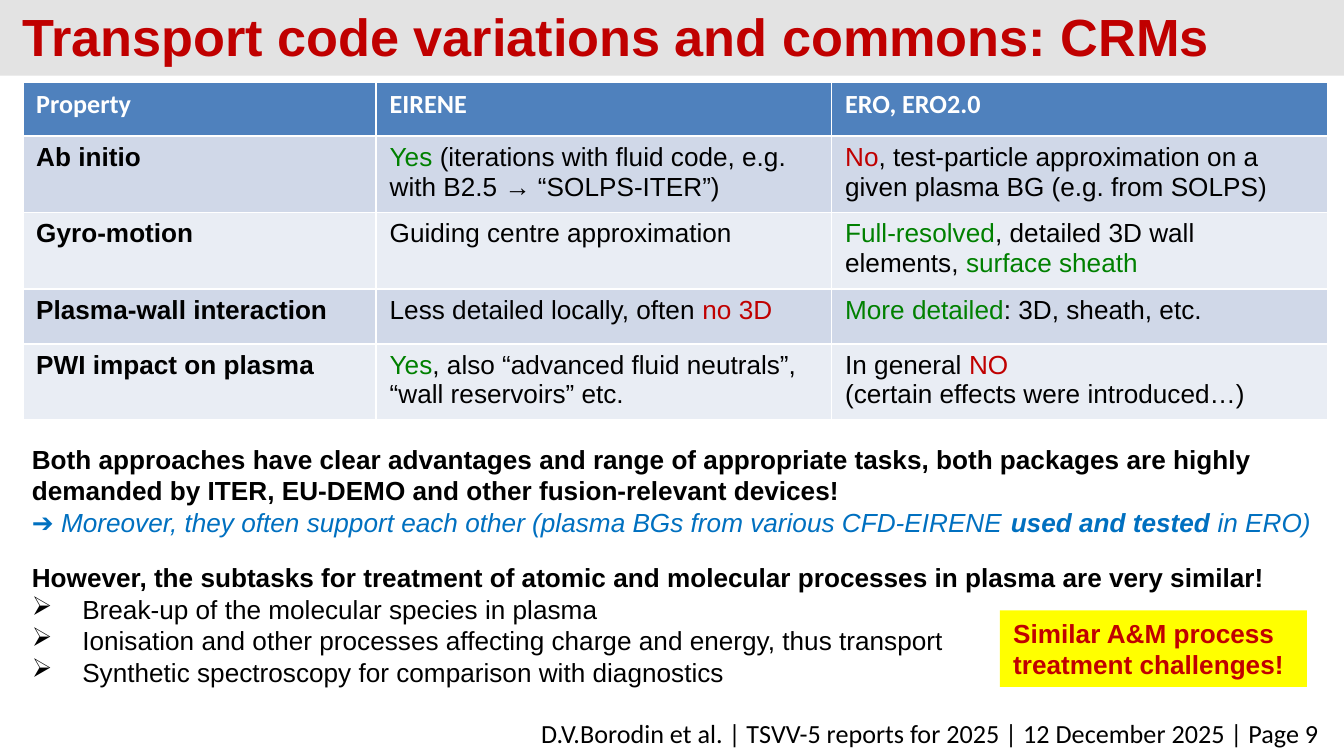
from dataclasses import dataclass

from lxml import etree
from pptx import Presentation
from pptx.dml.color import RGBColor
from pptx.enum.shapes import MSO_SHAPE
from pptx.enum.text import MSO_ANCHOR, PP_ALIGN
from pptx.oxml.ns import qn
from pptx.util import Pt

RECT = MSO_SHAPE.RECTANGLE
MIDDLE = MSO_ANCHOR.MIDDLE
LEFT, RIGHT = PP_ALIGN.LEFT, PP_ALIGN.RIGHT
TITLE_ONLY = 5


@dataclass(frozen=True)
class Theme:
    black: str = "000000"
    white: str = "FFFFFF"
    red: str = "C00000"
    green: str = "008000"
    blue: str = "0070C0"
    band: str = "E3E3E3"
    head: str = "4F81BD"
    odd: str = "D0D8E8"
    even: str = "E9EDF4"
    note: str = "FFFF00"
    sans: str = "Arial"
    alt: str = "Calibri"
    big: int = 28
    text: int = 14


T = Theme()

HEADS = ["Property", "EIRENE", "ERO, ERO2.0"]
ROWS = [
    ("Ab initio",
     [[("Yes ", T.green), ("(iterations with fluid code, e.g. with B2.5 → “SOLPS-ITER”)", T.black)]],
     [[("No", T.red), (", test-particle approximation on a given plasma BG (e.g. from SOLPS)", T.black)]]),
    ("Gyro-motion",
     [[("Guiding centre approximation", T.black)]],
     [[("Full-resolved", T.green), (", detailed 3D wall elements, ", T.black),
       ("surface sheath", T.green)]]),
    ("Plasma-wall interaction",
     [[("Less detailed locally, often ", T.black), ("no 3D", T.red)]],
     [[("More detailed", T.green), (": 3D, sheath, etc.", T.black)]]),
    ("PWI impact on plasma",
     [[("Yes", T.green), (", also “advanced fluid neutrals”, “wall reservoirs” etc.", T.black)]],
     [[("In general ", T.black), ("NO", T.red)],
      [("(certain effects were introduced…)", T.black)]]),
]
COLS = [189.4, 244, 266]
HIGHS = [29, 40.6, 40.6, 29.5, 40.6]

CLAIM = ("Both approaches have clear advantages and range of appropriate tasks, "
         "both packages are highly demanded by ITER, EU-DEMO and other fusion-relevant devices!")
MORE = [("➔ Moreover, they often support each other (plasma BGs from various CFD-EIRENE ", False),
        ("used and tested", True), (" in ERO)", False)]
TURN = ("However, the subtasks for treatment of atomic and molecular processes "
        "in plasma are very similar!")
TASKS = ["Break-up of the molecular species in plasma",
         "Ionisation and other processes affecting charge and energy, thus transport",
         "Synthetic spectroscopy for comparison with diagnostics"]


def rgb(code):
    return RGBColor.from_string(code)


def style(par, color=None, bold=None, face=T.sans, size=T.text):
    font = par.font
    font.name, font.size, font.bold = face, Pt(size), bold
    if color:
        font.color.rgb = rgb(color)


def next_par(frame):
    first = frame.paragraphs[0]
    return frame.add_paragraph() if first.runs else first


def write(frame, text, **look):
    par = next_par(frame)
    par.add_run().text = text
    style(par, **look)
    return par


def bullet(par, sign, step):
    props = par._p.get_or_add_pPr()
    props.set("marL", str(Pt(step)))
    props.set("indent", str(-Pt(step)))
    etree.SubElement(props, qn("a:buChar")).set("char", sign)


def panel(slide, box, fill):
    shape = slide.shapes.add_shape(RECT, *map(Pt, box))
    shape.shadow.inherit = False
    shape.fill.solid()
    shape.fill.fore_color.rgb = rgb(fill)
    shape.line.fill.background()
    return shape


def text_box(slide, box):
    frame = slide.shapes.add_textbox(*map(Pt, box)).text_frame
    frame.word_wrap = True
    return frame


def banner(slide, box):
    x, y, w, h = box
    band = panel(slide, box, T.band)
    tree = slide.shapes._spTree
    tree.remove(band._element)
    tree.insert(2, band._element)
    title = slide.shapes.title
    title.left, title.top, title.width, title.height = map(Pt, (x + 12, y + 6, w - 72, h - 14.5))
    frame = title.text_frame
    frame.margin_left = frame.margin_right = frame.margin_top = frame.margin_bottom = 0
    frame.vertical_anchor = MIDDLE
    par = write(frame, "Transport code variations and commons: CRMs",
                color=T.red, bold=True, size=T.big)
    par.alignment = LEFT


def fill_cell(cell, color):
    cell.fill.solid()
    cell.fill.fore_color.rgb = rgb(color)


def grid(slide, box):
    table = slide.shapes.add_table(len(HIGHS), len(COLS), *map(Pt, box)).table
    for col, wide in zip(table.columns, COLS):
        col.width = Pt(wide)
    for row, high in zip(table.rows, HIGHS):
        row.height = Pt(high)
    for c, head in enumerate(HEADS):
        cell = table.cell(0, c)
        fill_cell(cell, T.head)
        write(cell.text_frame, head, color=T.white, bold=True, face=T.alt)
    for r, (name, *pairs) in enumerate(ROWS, 1):
        for c in range(len(COLS)):
            fill_cell(table.cell(r, c), T.odd if r % 2 else T.even)
        write(table.cell(r, 0).text_frame, name, color=T.black, bold=True)
        for c, lines in enumerate(pairs, 1):
            for line in lines:
                par = next_par(table.cell(r, c).text_frame)
                for text, color in line:
                    run = par.add_run()
                    run.text = text
                    run.font.color.rgb = rgb(color)
                style(par, bold=False)


def body(slide, box):
    frame = text_box(slide, box)
    write(frame, CLAIM, color=T.black, bold=True)
    par = next_par(frame)
    for text, bold in MORE:
        run = par.add_run()
        run.text = text
        run.font.bold = bold
    style(par, color=T.blue)
    par.font.italic = True
    par = write(frame, TURN, color=T.black, bold=True)
    par.space_before = Pt(13)
    for task in TASKS:
        par = next_par(frame)
        bullet(par, "➢", 27)
        par.add_run().text = task
        style(par, color=T.black)


def callout(slide, box):
    frame = panel(slide, box, T.note).text_frame
    frame.word_wrap = True
    par = write(frame, "Similar A&M process treatment challenges!", color=T.red, bold=True)
    par.alignment = LEFT


def footer(slide, box):
    par = write(text_box(slide, box),
                "D.V.Borodin et al. | TSVV-5 reports for 2025 | 12 December 2025 | Page 9",
                color=T.black, face=T.alt)
    par.alignment = RIGHT


def main():
    deck = Presentation()
    deck.slide_width, deck.slide_height = Pt(720), Pt(405)
    slide = deck.slides.add_slide(deck.slide_layouts[TITLE_ONLY])
    banner(slide, (0, 0, 720, 40.5))
    footer(slide, (99, 381, 615, 24.5))
    grid(slide, (12.2, 44, sum(COLS), sum(HIGHS)))
    body(slide, (10, 234, 700.5, 143))
    callout(slide, (535.7, 327, 164.5, 41))
    deck.save("out.pptx")


if __name__ == "__main__":
    main()
